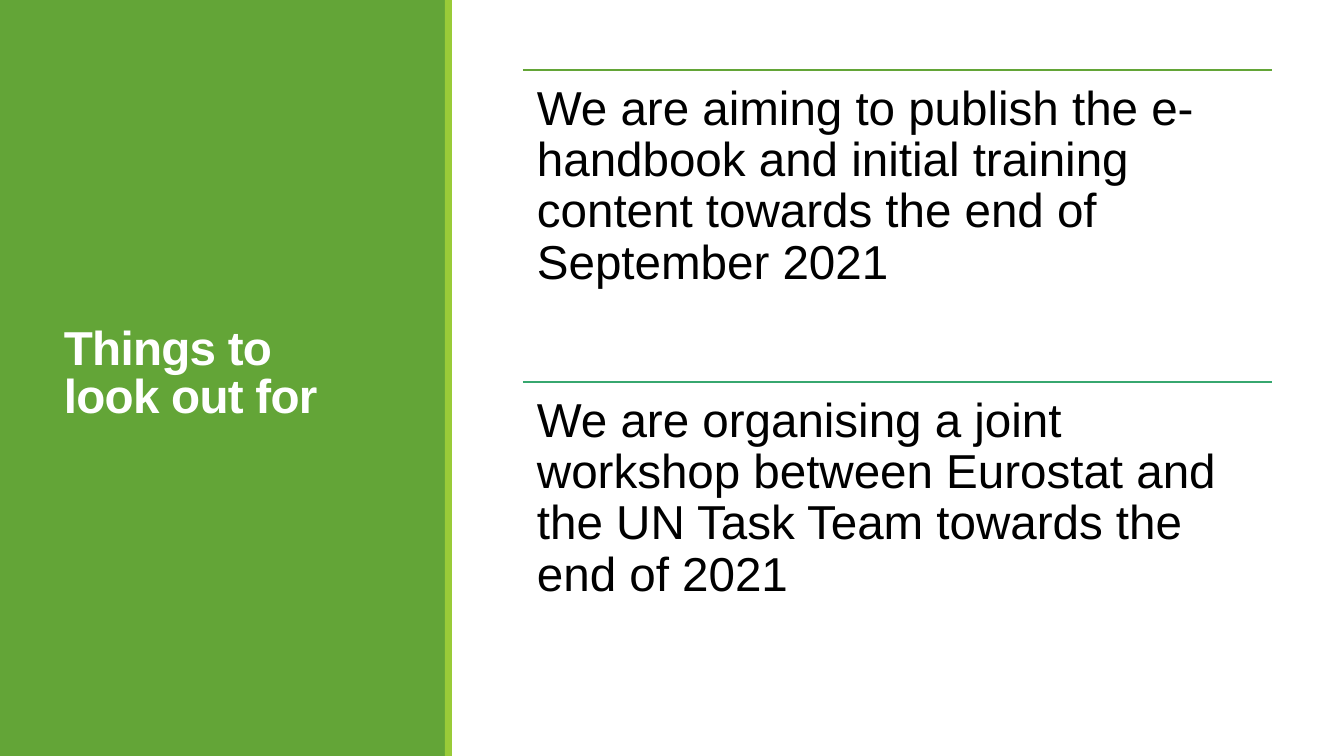
from lxml import etree
from pptx import Presentation
from pptx import util as u
from pptx.dml.color import RGBColor
from pptx.enum import shapes, text
from pptx.oxml.ns import qn

PX = 12700 * 72 / 100.8
COLORS = {"panel": "63A537", "edge": "99CB38", "second": "37A76F",
          "title": "FFFFFF", "body": "000000"}


def px(*lengths):
    return [u.Emu(round(length * PX)) for length in lengths]


def add_text(box, words, color, line_spacing):
    """Put one left-aligned 34 pt paragraph into a box and return it."""
    box.text_frame.word_wrap = True
    paragraph = box.text_frame.paragraphs[0]
    paragraph.text = words
    paragraph.line_spacing = line_spacing
    for run in paragraph.runs:
        run.font.name = "Arial"
        run.font.size = u.Pt(34)
        run.font.color.rgb = RGBColor.from_string(COLORS[color])
    return paragraph


prs = Presentation()
prs.slide_width, prs.slide_height = px(1344, 756)
slide = prs.slides.add_slide(prs.slide_layouts[6])

# Green side panel with its lighter edge
for left, width, color in [(0, 446, "panel"), (445, 7, "edge")]:
    band = slide.shapes.add_shape(shapes.MSO_SHAPE.RECTANGLE, *px(left, 0, width, 756))
    band.shadow.inherit = False
    band.fill.solid()
    band.fill.fore_color.rgb = RGBColor.from_string(COLORS[color])
    band.line.fill.background()

title = slide.shapes.add_textbox(*px(54, 57, 340, 636))
title.text_frame.vertical_anchor = text.MSO_ANCHOR.MIDDLE
heading = add_text(title, "Things to \vlook out for", "title", 0.85)
for run in heading.runs:
    run.font.bold = True
    run.font._element.set("spc", "-50")

# Announcements, each under its own rule
LEFT, TOP, WIDTH, HEIGHT = 523, 70, 749, 312
announcements = [
    ("We are aiming to publish the e-handbook and initial training content "
     "towards the end of September 2021", "panel"),
    ("We are organising a joint workshop between Eurostat and the UN Task Team "
     "towards the end of 2021", "second"),
]
for index, (words, color) in enumerate(announcements):
    top = TOP + index * HEIGHT
    rule = slide.shapes.add_connector(
        shapes.MSO_CONNECTOR.STRAIGHT, *px(LEFT, top, LEFT + WIDTH, top))
    rule.line.color.rgb = RGBColor.from_string(COLORS[color])
    rule.line.width = u.Pt(1.25)
    etree.SubElement(rule._element.spPr, qn("a:effectLst"))

    announcement = slide.shapes.add_textbox(*px(LEFT, top, WIDTH, HEIGHT))
    frame = announcement.text_frame
    frame.margin_left, frame.margin_top, frame.margin_right, frame.margin_bottom = px(14, 14, 14, 14)
    add_text(announcement, words, "body", 0.9)

prs.save("out.pptx")
